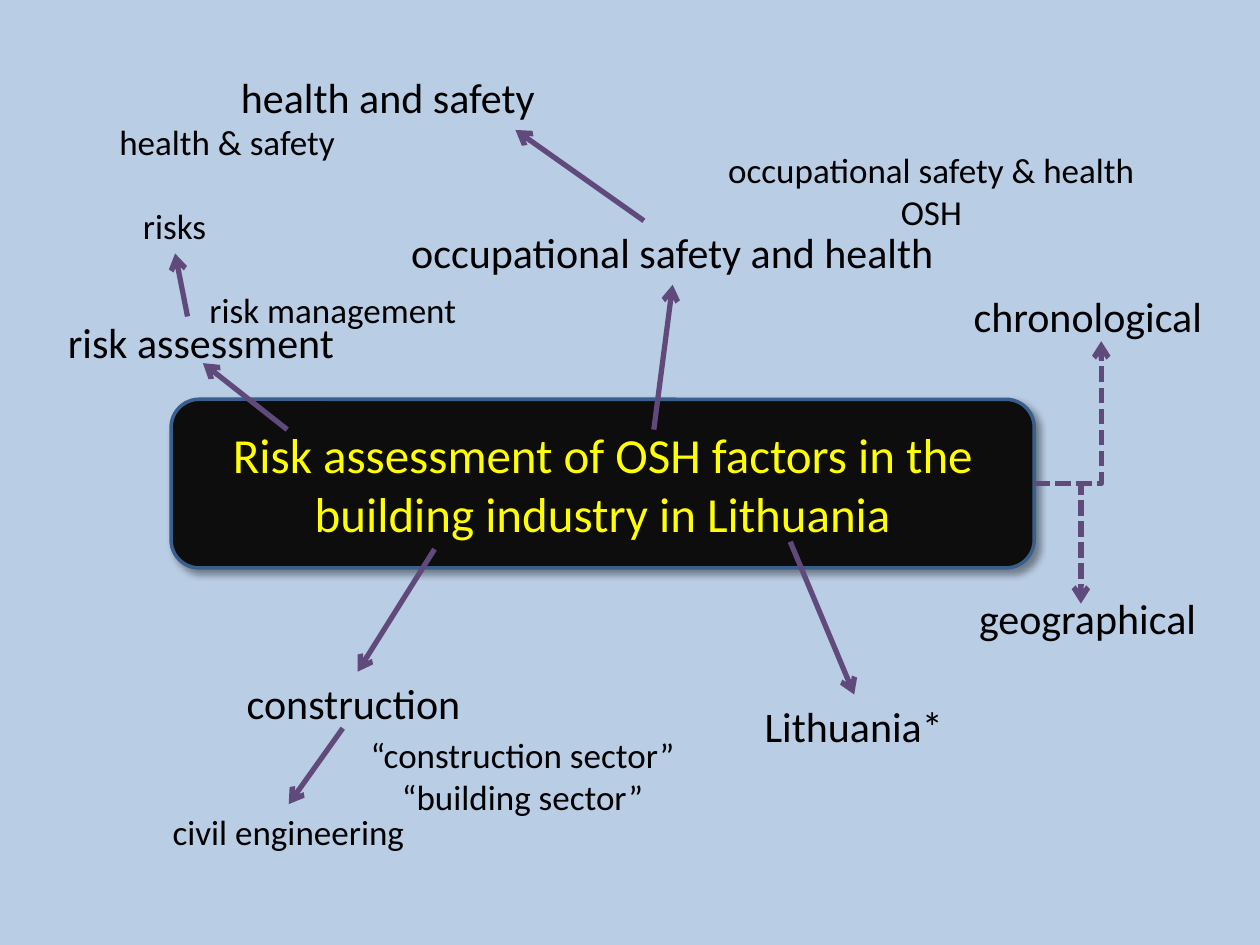
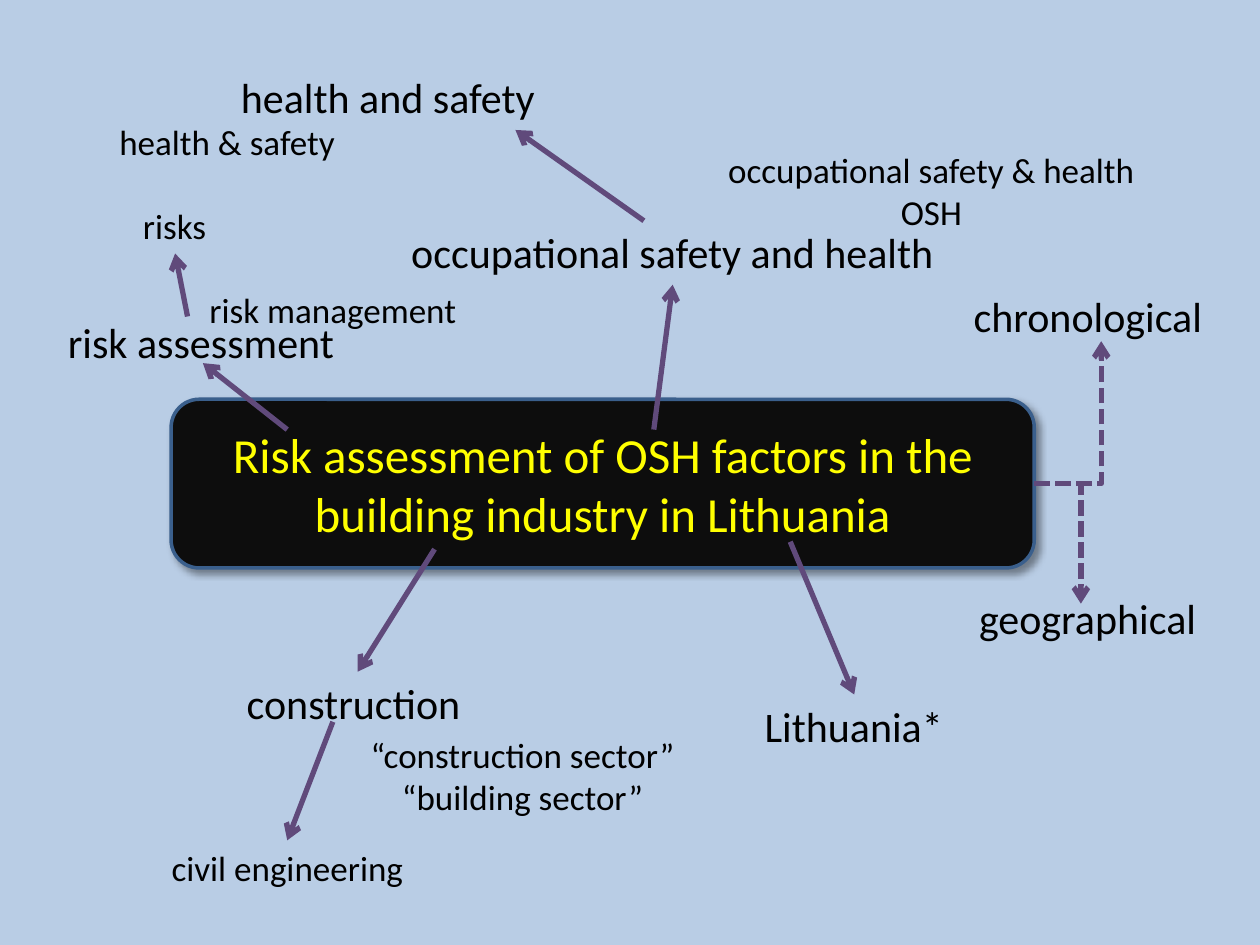
from dataclasses import dataclass

from lxml import etree
from pptx import Presentation
from pptx import util as u
from pptx.dml.color import RGBColor
from pptx.enum import dml, shapes, text
from pptx.oxml import parse_xml
from pptx.oxml.ns import nsdecls, qn


@dataclass(frozen=True)
class Theme:
    font: str = "Calibri"
    background: str = "B9CDE5"
    box_fill: str = "0D0D0D"
    box_line: str = "3A5F8C"
    topic_text: str = "FFFF00"
    label_text: str = "000000"
    arrow: str = "604A7B"
    topic_size: int = 28
    main_size: int = 24
    minor_size: int = 20
    box_line_width: int = 2
    arrow_width: int = 3


THEME = Theme()

# Content: lengths in centimetres
TOPIC = "Risk assessment of OSH factors in the building industry in Lithuania"
TOPIC_BOX = (3.45, 8.05, 17.4, 3.4)

# Left, top, width, lines of text
MAIN_TERMS = [
    (15.14, 14, 4.14, ["Lithuania*"]),
    (4.7, 13.54, 5.05, ["construction "]),
    (19.35, 5.74, 5.16, ["chronological"]),
    (4.57, 1.32, 6.5, ["health and safety"]),
    (7.98, 4.45, 11.15, ["occupational safety and health"]),
    (19.46, 11.81, 4.93, ["geographical"]),
    (1.09, 6.25, 5.92, ["risk assessment"]),
]
MINOR_TERMS = [
    (14.38, 2.87, 8.79, ["occupational safety & health", "OSH"]),
    (2.13, 2.31, 4.9, ["health & safety"]),
    (2.62, 3.99, 1.8, ["risks"]),
    (3.94, 5.69, 5.54, ["risk management"]),
    (7.21, 14.66, 6.65, ["“construction sector”", "“building sector”"]),
]

# Start and end points
ARROWS = [
    ((8.76, 11.07), (7.21, 13.54)),
    ((15.93, 10.92), (17.22, 14)),
    ((12.98, 4.45), (10.39, 2.62)),
    ((13.18, 8.66), (13.56, 5.74)),
    ((5.79, 8.66), (4.09, 7.32)),
    ((3.78, 6.38), (3.53, 5.11)),
]
LIMIT_ENDS = [(21.79, 12.17), (22.2, 6.88)]

# The civil engineering branch is the part that moves between slides
CIVIL_BRANCHES = [
    {"term": (3.2, 16.21, 5.23, ["civil engineering"]),
     "arrow": ((6.91, 14.68), (5.82, 16.21))},
    {"term": (3.18, 16.94, 5.23, ["civil engineering"]),
     "arrow": ((6.71, 14.55), (5.79, 16.94))},
]


def rgb(value):
    return RGBColor.from_string(value)


def write(frame, lines, size, color):
    for index, line in enumerate(lines):
        paragraph = frame.paragraphs[0] if index == 0 else frame.add_paragraph()
        paragraph.alignment = text.PP_ALIGN.CENTER
        run = paragraph.add_run()
        run.text = line
        run.font.name = THEME.font
        run.font.size = u.Pt(size)
        run.font.color.rgb = rgb(color)


def add_topic(slide):
    box = slide.shapes.add_shape(
        shapes.MSO_SHAPE.ROUNDED_RECTANGLE, *map(u.Cm, TOPIC_BOX))
    box.fill.solid()
    box.fill.fore_color.rgb = rgb(THEME.box_fill)
    box.line.color.rgb = rgb(THEME.box_line)
    box.line.width = u.Pt(THEME.box_line_width)
    # Soft shadow towards the lower right
    box._element.spPr.append(parse_xml(
        f'<a:effectLst {nsdecls("a")}>'
        f'<a:outerShdw blurRad="{u.Pt(4)}" dist="{u.Pt(3)}" dir="{45 * 60000}" '
        'algn="tl" rotWithShape="0"><a:srgbClr val="000000">'
        '<a:alpha val="40000"/></a:srgbClr></a:outerShdw></a:effectLst>'))
    frame = box.text_frame
    frame.word_wrap = True
    frame.vertical_anchor = text.MSO_ANCHOR.MIDDLE
    write(frame, [TOPIC], THEME.topic_size, THEME.topic_text)


def add_term(slide, term, size):
    left, top, width, lines = term
    # Line height is 1.2 times the type size, plus the two insets
    height = u.Pt(7.2 + 1.2 * size * len(lines))
    box = slide.shapes.add_textbox(u.Cm(left), u.Cm(top), u.Cm(width), height)
    frame = box.text_frame
    frame.word_wrap = False
    frame.auto_size = text.MSO_AUTO_SIZE.SHAPE_TO_FIT_TEXT
    write(frame, lines, size, THEME.label_text)


def add_arrow(slide, start, end, bent=False):
    kind = shapes.MSO_CONNECTOR.ELBOW if bent else shapes.MSO_CONNECTOR.STRAIGHT
    arrow = slide.shapes.add_connector(kind, *map(u.Cm, (*start, *end)))
    arrow.line.color.rgb = rgb(THEME.arrow)
    arrow.line.width = u.Pt(THEME.arrow_width)
    properties = arrow._element.spPr
    if bent:
        arrow.line.dash_style = dml.MSO_LINE.SQUARE_DOT
        properties.find(qn("a:prstGeom")).set("prst", "bentConnector2")
    etree.SubElement(properties.find(qn("a:ln")), qn("a:tailEnd"), type="arrow")
    etree.SubElement(properties, qn("a:effectLst"))


def add_concept_map(presentation, branch):
    slide = presentation.slides.add_slide(presentation.slide_layouts[6])
    slide.background.fill.solid()
    slide.background.fill.fore_color.rgb = rgb(THEME.background)
    add_topic(slide)

    # Search terms
    for term in MAIN_TERMS:
        add_term(slide, term, THEME.main_size)
    for term in [*MINOR_TERMS, branch["term"]]:
        add_term(slide, term, THEME.minor_size)

    # Arrows, and dashed limits from the middle of the box's right side
    for start, end in [*ARROWS, branch["arrow"]]:
        add_arrow(slide, start, end)
    left, top, width, height = TOPIC_BOX
    for end in LIMIT_ENDS:
        add_arrow(slide, (left + width, top + height / 2), end, bent=True)


def main():
    presentation = Presentation()
    presentation.slide_width = u.Cm(25.4)
    presentation.slide_height = u.Cm(19.05)
    for branch in CIVIL_BRANCHES:
        add_concept_map(presentation, branch)
    presentation.save("out.pptx")


if __name__ == "__main__":
    main()
